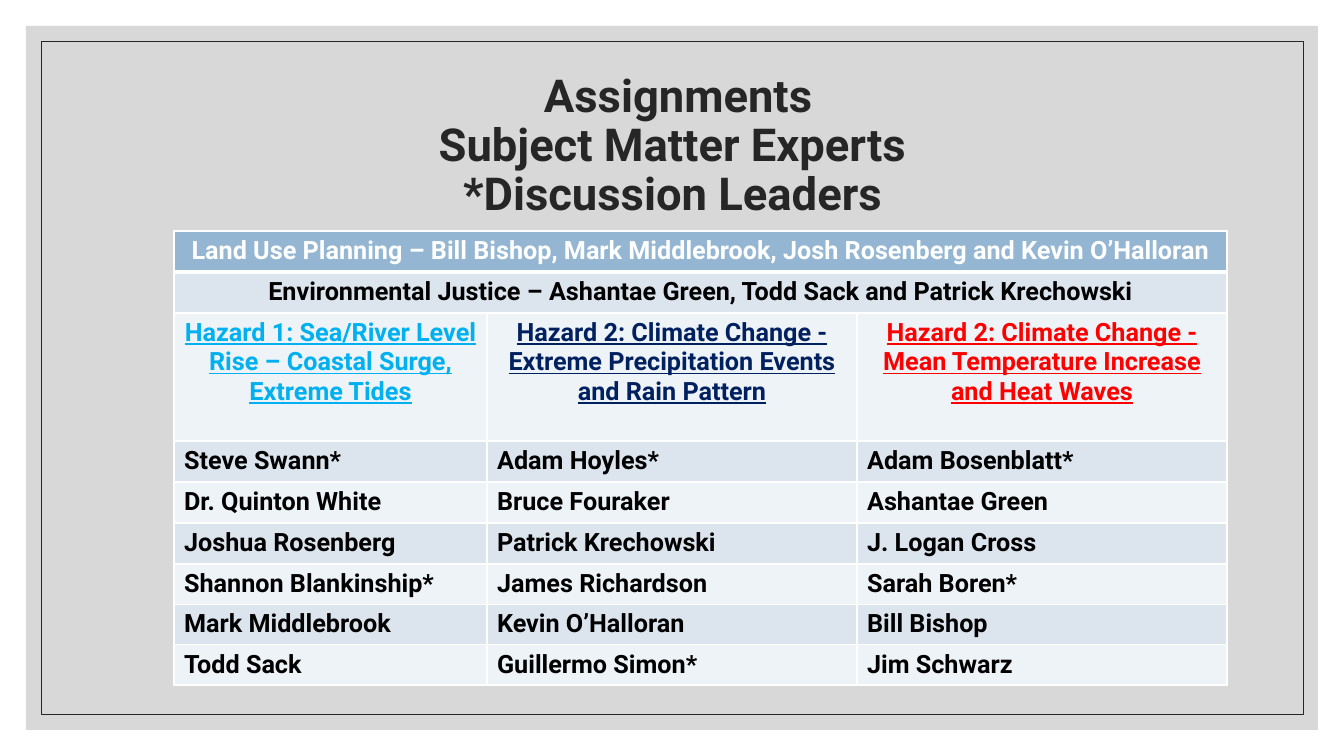
"""Build the slide of subject matter expert assignments by hazard."""
from lxml import etree
from pptx import Presentation
from pptx.dml.color import RGBColor
from pptx.enum.shapes import MSO_SHAPE
from pptx.enum.text import MSO_ANCHOR, PP_ALIGN
from pptx.oxml.ns import qn
from pptx.util import Pt

RECTANGLE = MSO_SHAPE.RECTANGLE
MIDDLE = MSO_ANCHOR.MIDDLE
CENTER, LEFT = PP_ALIGN.CENTER, PP_ALIGN.LEFT

FONT = "Roboto"
INK, BLACK, WHITE = "262626", "000000", "FFFFFF"
TITLE = " Assignments\vSubject Matter Experts\v*Discussion Leaders"
BANNERS = [
    ("Land Use Planning – Bill Bishop, Mark Middlebrook, Josh Rosenberg and Kevin O’Halloran", WHITE),
    ("Environmental Justice – Ashantae Green, Todd Sack and Patrick Krechowski", BLACK),
]
HAZARDS = [
    ("Hazard 1: Sea/River Level Rise – Coastal Surge, Extreme Tides", "00B0F0"),
    ("Hazard 2: Climate Change - Extreme Precipitation Events and Rain Pattern", "002060"),
    ("Hazard 2: Climate Change - Mean Temperature Increase and Heat Waves", "FF0000"),
]
EXPERTS = [
    ("Steve Swann*", "Adam Hoyles*", "Adam Bosenblatt*"),
    ("Dr. Quinton White", "Bruce Fouraker", "Ashantae Green"),
    ("Joshua Rosenberg", "Patrick Krechowski", "J. Logan Cross"),
    ("Shannon Blankinship*", "James Richardson", "Sarah Boren*"),
    ("Mark Middlebrook", "Kevin O’Halloran", "Bill Bishop"),
    ("Todd Sack", "Guillermo Simon*", "Jim Schwarz"),
]
HEADER_FILL = "94B6D2"
BAND_FILLS = ["EEF3F7", "DCE5EE"]
COLUMN_WIDTHS = [313, 370, 370]
ROW_HEIGHTS = [41, 41, 128, 41, 41, 41, 40, 40, 40]
TABLE_LEFT, TABLE_TOP = 174, 231
HAZARD_ROW = len(BANNERS)


def px(length):
    """Turn px into EMU."""
    return round(length * 914400 / 100.8)


def color(value):
    """Turn a hex string into a colour."""
    return RGBColor.from_string(value)


def add_panel(slide, left, top, width, height):
    """Add a plain rectangle without shadow."""
    shape = slide.shapes.add_shape(RECTANGLE, px(left), px(top), px(width), px(height))
    shape.shadow.inherit = False
    return shape


def style_text(text_frame, size, ink, alignment, underline=False):
    """Format the single paragraph of a text frame."""
    paragraph = text_frame.paragraphs[0]
    paragraph.alignment = alignment
    for run in paragraph.runs:
        run.font.name = FONT
        run.font.size = Pt(size)
        run.font.bold = True
        run.font.underline = underline
        run.font.color.rgb = color(ink)
    return paragraph


def style_cell(cell, row):
    """Give a cell its white borders and its band fill."""
    properties = cell._tc.get_or_add_tcPr()
    thick_side = {0: "lnB", 1: "lnT"}.get(row)
    for side in ("lnL", "lnR", "lnT", "lnB"):
        width = Pt(3 if side == thick_side else 1)
        line = etree.SubElement(properties, qn(f"a:{side}"), w=str(width))
        fill = etree.SubElement(line, qn("a:solidFill"))
        etree.SubElement(fill, qn("a:srgbClr"), val=WHITE)
    cell.fill.solid()
    cell.fill.fore_color.rgb = color(BAND_FILLS[row % 2] if row else HEADER_FILL)


def add_backdrop(slide):
    """Add the translucent grey panel and the thin frame."""
    panel = add_panel(slide, 26, 26, 1292, 704)
    panel.fill.solid()
    panel.fill.fore_color.rgb = color("BFBFBF")
    panel.line.fill.background()
    fill_color = panel.fill._xPr.find(qn("a:solidFill"))[0]
    etree.SubElement(fill_color, qn("a:alpha"), val="60000")
    frame = add_panel(slide, 41, 41, 1262, 673)
    frame.fill.background()
    frame.line.color.rgb = color(INK)
    frame.line.width = Pt(0.5)


def add_title(slide):
    """Add the three-line title."""
    box = slide.shapes.add_textbox(px(118), px(71), px(1109), px(151))
    text_frame = box.text_frame
    text_frame.word_wrap = True
    text_frame.vertical_anchor = MIDDLE
    text_frame.text = TITLE
    style_text(text_frame, 32.4, INK, CENTER).line_spacing = 0.9


def add_assignments(slide):
    """Add the table of banners, hazards and experts."""
    table = slide.shapes.add_table(
        len(ROW_HEIGHTS), len(COLUMN_WIDTHS), px(TABLE_LEFT), px(TABLE_TOP),
        px(sum(COLUMN_WIDTHS)), px(sum(ROW_HEIGHTS))).table
    table.first_row = table.horz_banding = False
    for column, width in zip(table.columns, COLUMN_WIDTHS):
        column.width = px(width)
    for row, height in enumerate(ROW_HEIGHTS):
        table.rows[row].height = px(height)
        for cell in table.rows[row].cells:
            style_cell(cell, row)
    for row in range(HAZARD_ROW):
        table.cell(row, 0).merge(table.cell(row, len(COLUMN_WIDTHS) - 1))
    entries = [[banner] for banner in BANNERS] + [HAZARDS]
    entries += [[(name, BLACK) for name in names] for names in EXPERTS]
    for row, row_entries in enumerate(entries):
        for column, (text, ink) in enumerate(row_entries):
            text_frame = table.cell(row, column).text_frame
            text_frame.text = text
            alignment = CENTER if row <= HAZARD_ROW else LEFT
            style_text(text_frame, 18, ink, alignment, row == HAZARD_ROW)


def main():
    """Build and save the presentation."""
    presentation = Presentation()
    presentation.slide_width, presentation.slide_height = px(1344), px(756)
    slide = presentation.slides.add_slide(presentation.slide_layouts[6])
    add_backdrop(slide)
    add_title(slide)
    add_assignments(slide)
    presentation.save("out.pptx")


if __name__ == "__main__":
    main()
